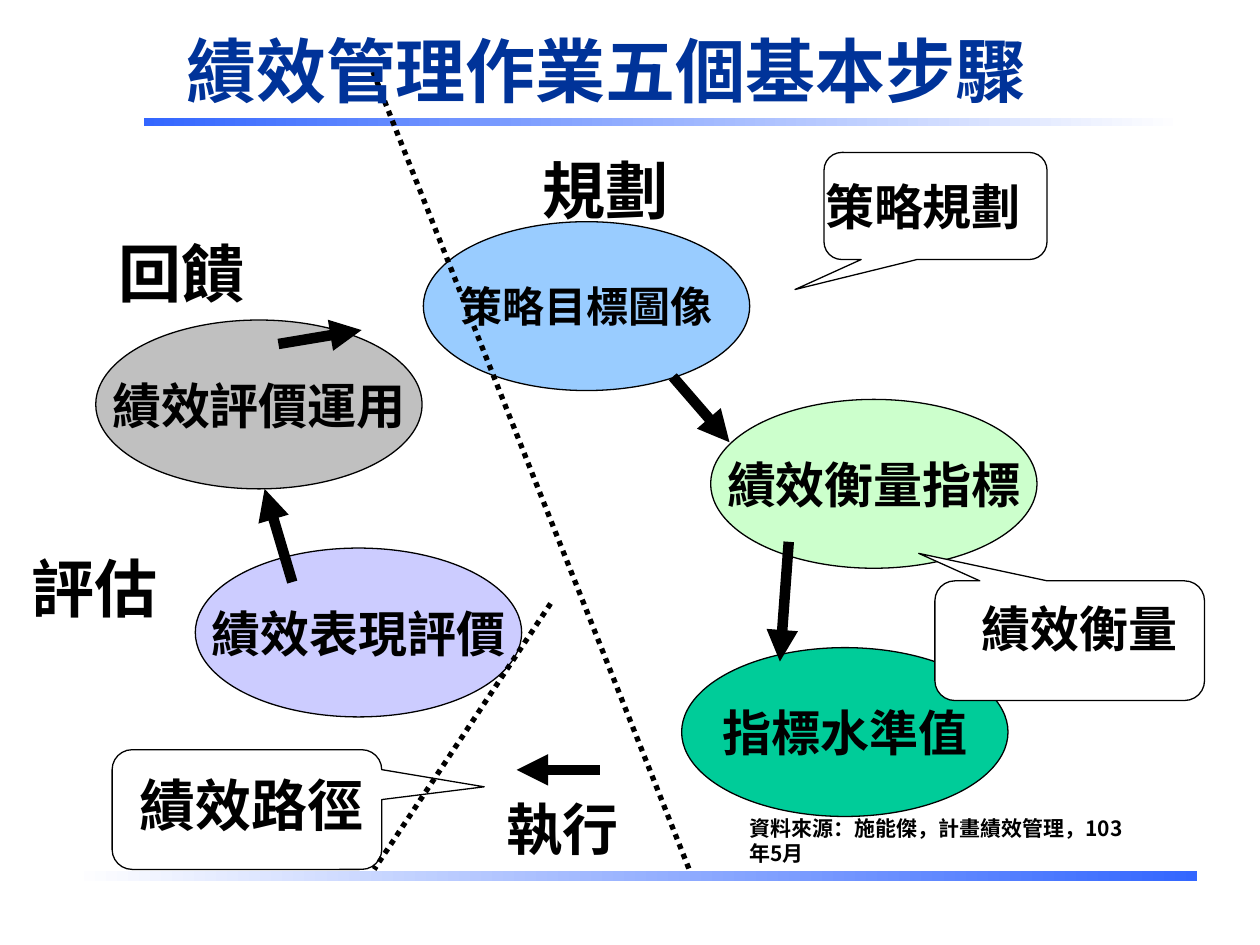
from lxml import etree
from pptx import Presentation
from pptx.dml.color import RGBColor
from pptx.enum.dml import MSO_LINE
from pptx.enum.shapes import MSO_CONNECTOR, MSO_SHAPE
from pptx.enum.text import MSO_ANCHOR, PP_ALIGN
from pptx.oxml.ns import qn
from pptx.util import Pt

PX = 9144  # 100 px to the inch
FONT = "Noto Sans CJK SC"
BLACK, WHITE, BLUE, NAVY = "000000", "FFFFFF", "3366FF", "003399"
RECT, OVAL = MSO_SHAPE.RECTANGLE, MSO_SHAPE.OVAL
CALLOUT = MSO_SHAPE.ROUNDED_RECTANGULAR_CALLOUT
STRAIGHT = MSO_CONNECTOR.STRAIGHT
DOTTED = MSO_LINE.ROUND_DOT
LEFT, CENTER = PP_ALIGN.LEFT, PP_ALIGN.CENTER
TOP, MIDDLE = MSO_ANCHOR.TOP, MSO_ANCHOR.MIDDLE


def rgb(hex_color):
    return RGBColor.from_string(hex_color)


def emu(*lengths):
    return [length * PX for length in lengths]


def write(frame, text, size=28, color=BLACK, align=LEFT, anchor=TOP, wrap=True):
    frame.word_wrap = wrap
    frame.vertical_anchor = anchor
    paragraph = frame.paragraphs[0]
    paragraph.alignment = align
    run = paragraph.add_run()
    run.text = text
    run.font.size = Pt(size)
    run.font.bold = True
    run.font.color.rgb = rgb(color)
    run.font.name = FONT
    east_asian = etree.SubElement(run.font._element, qn("a:ea"))
    east_asian.set("typeface", FONT)


class StepsSlide:
    def __init__(self, slide):
        self.shapes = slide.shapes

    def shape(self, kind, box):
        shape = self.shapes.add_shape(kind, *emu(*box))
        shape.shadow.inherit = False
        return shape

    def outlined(self, kind, box, fill):
        shape = self.shape(kind, box)
        shape.fill.solid()
        shape.fill.fore_color.rgb = rgb(fill)
        shape.line.color.rgb = rgb(BLACK)
        shape.line.width = Pt(0.75)
        return shape

    def bar(self, box, start, end):
        bar = self.shape(RECT, box)
        bar.fill.gradient()
        bar.fill.gradient_angle = 0
        for stop, color in zip(bar.fill.gradient_stops, (start, end)):
            stop.color.rgb = rgb(color)
        bar.line.fill.background()

    def step(self, left, top, fill, text, size=28):
        oval = self.outlined(OVAL, (left, top, 259, 134), fill)
        write(oval.text_frame, text, size=size, align=CENTER, anchor=MIDDLE, wrap=False)

    def callout(self, box, tip_x, tip_y):
        callout = self.outlined(CALLOUT, box, WHITE)
        callout.adjustments[0] = tip_x
        callout.adjustments[1] = tip_y

    def label(self, box, text, **style):
        write(self.shapes.add_textbox(*emu(*box)).text_frame, text, **style)

    def line(self, ends, width):
        line = self.shapes.add_connector(STRAIGHT, *emu(*ends))
        line.line.color.rgb = rgb(BLACK)
        line.line.width = Pt(width)
        etree.SubElement(line._element.spPr, qn("a:effectLst"))
        return line.line

    def divider(self, *ends):
        self.line(ends, 3).dash_style = DOTTED

    def arrow(self, *ends):
        outline = self.line(ends, 6)
        etree.SubElement(outline._get_or_add_ln(), qn("a:tailEnd"), type="triangle")


def main():
    deck = Presentation()
    deck.slide_width, deck.slide_height = emu(1000, 750)
    page = StepsSlide(deck.slides.add_slide(deck.slide_layouts[6]))

    # Gradient rules at the foot and under the title
    page.bar((58, 691, 892, 8), WHITE, BLUE)
    page.bar((114, 94, 825, 6), BLUE, WHITE)

    # The five steps
    page.step(336, 176, "99CCFF", "策略目標圖像", size=24)
    page.step(564, 317, "CCFFCC", "績效衡量指標")
    page.step(541, 514, "00CC99", "指標水準值")
    page.step(155, 435, "CCCCFF", "績效表現評價")
    page.step(76, 254, "C0C0C0", "績效評價運用")

    # Callouts and their wording
    page.callout((654, 121, 177, 85), -0.63, 0.78)
    page.callout((742, 461, 214, 95), -0.56, -0.73)
    page.callout((89, 595, 214, 95), 0.88, -0.19)
    page.label((645, 135, 178, 57), "策略規劃")
    page.label((769, 470, 188, 57), "績效衡量")
    page.label((101, 607, 202, 64), "績效路徑", size=32)

    # Phase names
    page.label((421, 115, 141, 71), "規劃", size=36)
    page.label((392, 626, 127, 64), "執行", size=32)
    page.label((15, 431, 140, 71), "評估", size=36)
    page.label((84, 181, 137, 71), "回饋", size=36)

    # Dividers between phases
    page.divider(296, 57, 547, 690)
    page.divider(437, 479, 297, 690)

    # Arrows from step to step
    page.arrow(534, 299, 579, 351)
    page.arrow(626, 430, 619, 525)
    page.arrow(476, 611, 410, 611)
    page.arrow(232, 462, 210, 388)
    page.arrow(221, 273, 287, 262)

    # Title and source
    page.label((138, 17, 693, 77), "績效管理作業五個基本步驟", size=40, color=NAVY, wrap=False)
    page.label((585, 642, 332, 71), "資料來源：施能傑，計畫績效管理，103年5月", size=12)

    deck.save("out.pptx")


if __name__ == "__main__":
    main()
